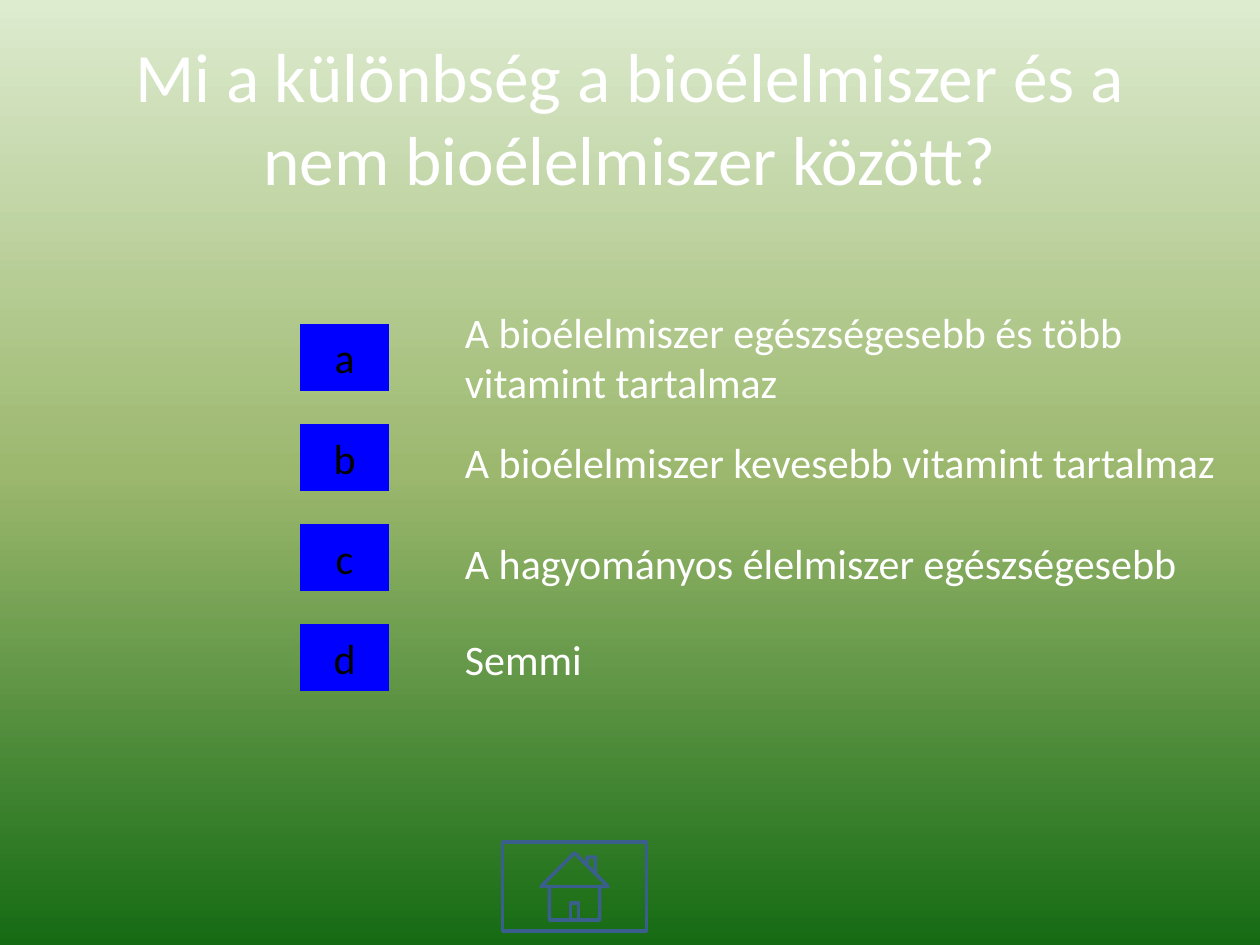
"""Build a quiz slide with four lettered answers and a home button."""
import copy

import pptx
import pptx.dml.color
import pptx.enum.shapes
import pptx.enum.text
import pptx.oxml.ns
import pptx.util

Pt = pptx.util.Pt
SHAPE = pptx.enum.shapes.MSO_SHAPE
ALIGN = pptx.enum.text.PP_ALIGN
ANCHOR = pptx.enum.text.MSO_ANCHOR


def rgb(value):
    return pptx.dml.color.RGBColor.from_string(value)


class QuizSlide:
    font = "Calibri"
    light = "FFFFFF"
    dark = "000000"
    button = "0000FF"
    outline = "3A5F8C"

    def __init__(self, prs):
        self.s = prs.slides.add_slide(prs.slide_layouts[6])

    def background(self, colors):
        fill = self.s.background.fill
        fill.gradient()
        fill.gradient_angle = 270
        stops = next(self.s.element.iter(pptx.oxml.ns.qn("a:gsLst")))
        while len(stops) < len(colors):
            stops.append(copy.deepcopy(stops[-1]))
        for i, (stop, color) in enumerate(zip(fill.gradient_stops, colors)):
            stop.position = i / (len(colors) - 1)
            stop.color.rgb = rgb(color)

    def set_lines(self, tf, lines, size, color, align, anchor):
        tf.vertical_anchor = anchor
        for i, line in enumerate(lines):
            p = tf.add_paragraph() if i else tf.paragraphs[0]
            p.text = line
            p.alignment = align
            p.font.name = self.font
            p.font.size = Pt(size)
            p.font.color.rgb = rgb(color)

    def text(self, box, lines, size, align=ALIGN.LEFT, anchor=ANCHOR.TOP, indent=0):
        tf = self.s.shapes.add_textbox(*map(Pt, box)).text_frame
        tf.word_wrap = True
        tf.margin_left = Pt(7.2 + indent)
        self.set_lines(tf, lines, size, self.light, align, anchor)

    def letter(self, box, letter):
        sp = self.s.shapes.add_shape(SHAPE.ACTION_BUTTON_CUSTOM, *map(Pt, box))
        sp.shadow.inherit = False
        sp.fill.solid()
        sp.fill.fore_color.rgb = rgb(self.button)
        sp.line.fill.background()
        sp.text_frame.word_wrap = False
        self.set_lines(sp.text_frame, [letter], 24, self.dark, ALIGN.CENTER, ANCHOR.MIDDLE)

    def home(self, box):
        sp = self.s.shapes.add_shape(SHAPE.ACTION_BUTTON_HOME, *map(Pt, box))
        sp.shadow.inherit = False
        sp.fill.background()
        sp.line.color.rgb = rgb(self.outline)
        sp.line.width = Pt(2)


def main():
    prs = pptx.Presentation()
    prs.slide_width, prs.slide_height = Pt(720), Pt(540)
    quiz = QuizSlide(prs)
    quiz.background(["DDEBCF", "9CB86E", "156B13"])
    quiz.text((36, 21.6, 648, 90),
              ["Mi a különbség a bioélelmiszer és a nem bioélelmiszer között?"],
              39.6, ALIGN.CENTER, ANCHOR.MIDDLE)
    answers = [
        ("a", 171.4, 65.5, ["A bioélelmiszer egészségesebb és több", "vitamint tartalmaz"]),
        ("b", 246.2, 36, ["A bioélelmiszer kevesebb vitamint tartalmaz"]),
        ("c", 303.8, 36, ["A hagyományos élelmiszer egészségesebb"]),
        ("d", 358.6, 36, ["Semmi"]),
    ]
    for i, (letter, top, height, lines) in enumerate(answers):
        quiz.letter((171.4, 185 + 57.2 * i, 51, 38.2), letter)
        quiz.text((222.5, top, 489, height), lines, 24, indent=36)
    quiz.home((287.3, 481, 82.1, 51.1))
    prs.save("out.pptx")


if __name__ == "__main__":
    main()
